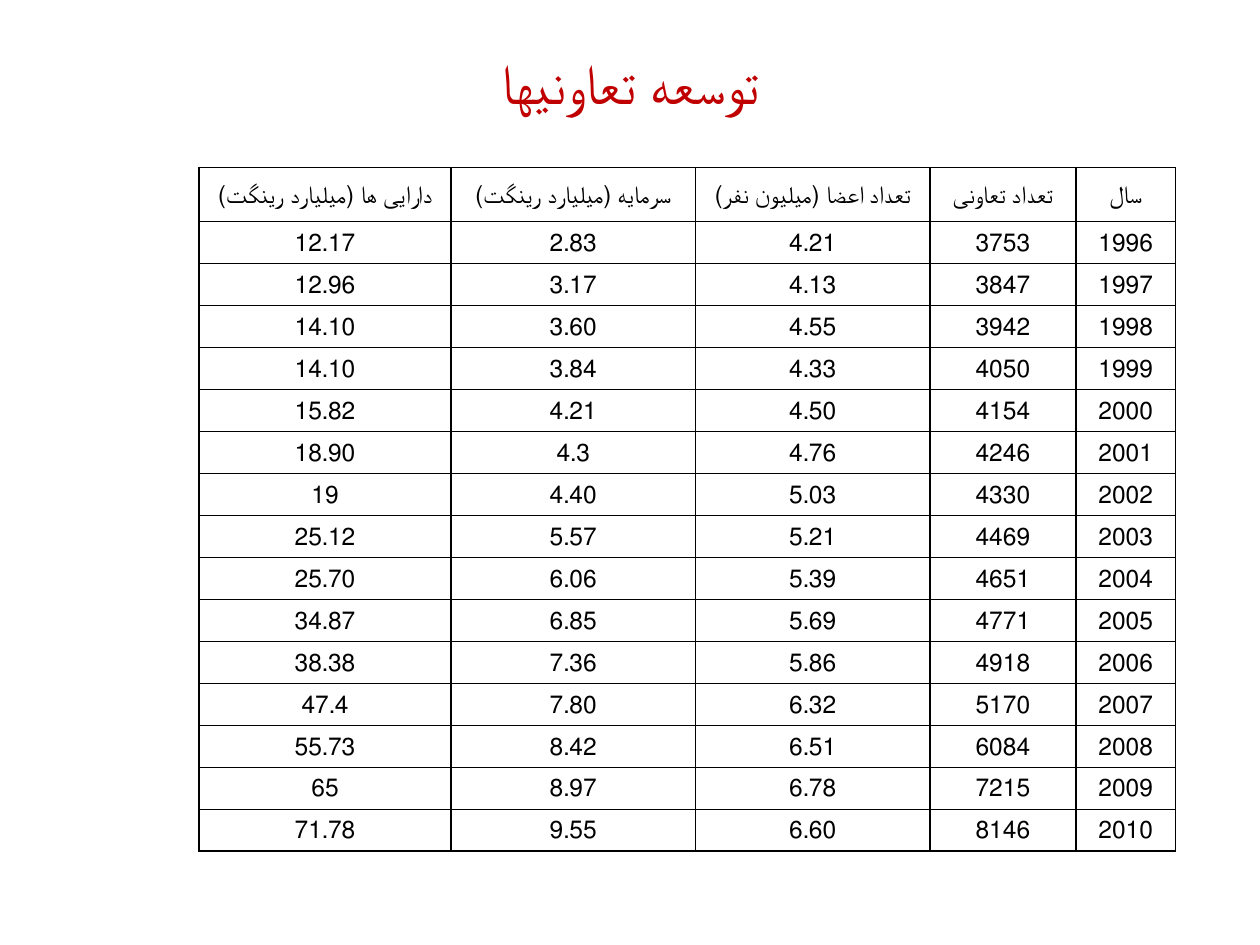
from lxml.etree import SubElement
from pptx import Presentation
from pptx.dml.color import RGBColor
from pptx.enum.text import MSO_ANCHOR, PP_ALIGN
from pptx.oxml.ns import qn
from pptx.util import Inches, Pt

WIDTH, HEIGHT = 10, 7.5
RED, BLACK = "C00000", "000000"
COLUMN_WIDTHS = [2, 1.94, 1.86, 1.16, 0.79]
HEADING_HEIGHT, ROW_HEIGHT = 0.43, 1 / 3

HEADINGS = ["دارایی ها (میلیارد رینگت)", "سرمایه (میلیارد رینگت)",
            "تعداد اعضا (میلیون نفر)", "تعداد تعاونی", "سال"]
FIRST_YEAR = 1996
# Assets, capital, members, cooperatives; one line per year
FIGURES = """
12.17 2.83 4.21 3753
12.96 3.17 4.13 3847
14.10 3.60 4.55 3942
14.10 3.84 4.33 4050
15.82 4.21 4.50 4154
18.90 4.3 4.76 4246
19 4.40 5.03 4330
25.12 5.57 5.21 4469
25.70 6.06 5.39 4651
34.87 6.85 5.69 4771
38.38 7.36 5.86 4918
47.4 7.80 6.32 5170
55.73 8.42 6.51 6084
65 8.97 6.78 7215
71.78 9.55 6.60 8146
""".strip().splitlines()


def rgb(color):
    return RGBColor.from_string(color)


def add_run(paragraph, text, size, font, color):
    paragraph.alignment = PP_ALIGN.CENTER
    run = paragraph.add_run()
    run.text = text
    run.font.size = Pt(size)
    run.font.name = font
    run.font.color.rgb = rgb(color)


def add_title(slide, text):
    title = slide.shapes.add_textbox(
        Inches(0.05 * WIDTH), Inches(0.04 * HEIGHT), Inches(0.9 * WIDTH), Inches(0.7))
    frame = title.text_frame
    frame.word_wrap = True
    frame.vertical_anchor = MSO_ANCHOR.MIDDLE
    add_run(frame.paragraphs[0], text, 32, "Arial", RED)


def add_borders(cell, color, width):
    properties = cell._tc.get_or_add_tcPr()
    for position, side in enumerate(("lnL", "lnR", "lnT", "lnB")):
        border = properties.makeelement(qn(f"a:{side}"), {"w": str(Pt(width))})
        fill = SubElement(border, qn("a:solidFill"))
        SubElement(fill, qn("a:srgbClr"), val=color)
        properties.insert(position, border)


def fill_cell(cell, text):
    cell.fill.background()
    cell.vertical_anchor = MSO_ANCHOR.MIDDLE
    cell.margin_left = cell.margin_right = Inches(0.02)
    cell.margin_top = cell.margin_bottom = 0
    paragraph = cell.text_frame.paragraphs[0]
    paragraph.line_spacing = 1.1
    add_run(paragraph, text, 14, "Times New Roman", BLACK)
    paragraph._p.get_or_add_pPr().set("rtl", "1")
    add_borders(cell, BLACK, 1)


def add_grid(slide, rows):
    heights = [HEADING_HEIGHT] + [ROW_HEIGHT] * (len(rows) - 1)
    table = slide.shapes.add_table(
        len(rows), len(COLUMN_WIDTHS), Inches(1.58), Inches(1.33),
        Inches(sum(COLUMN_WIDTHS)), Inches(sum(heights))).table
    table.first_row = table.horz_banding = False
    for column, width in zip(table.columns, COLUMN_WIDTHS):
        column.width = Inches(width)
    for row, height, values in zip(table.rows, heights, rows):
        row.height = Inches(height)
        for cell, value in zip(row.cells, values):
            fill_cell(cell, value)


def main():
    presentation = Presentation()
    presentation.slide_width, presentation.slide_height = Inches(WIDTH), Inches(HEIGHT)
    slide = presentation.slides.add_slide(presentation.slide_layouts[6])

    # Heading
    add_title(slide, "توسعه تعاونیها")

    # Yearly figures, with the year in the last column
    years = [[*line.split(), str(year)] for year, line in enumerate(FIGURES, FIRST_YEAR)]
    add_grid(slide, [HEADINGS, *years])

    presentation.save("out.pptx")


if __name__ == "__main__":
    main()
